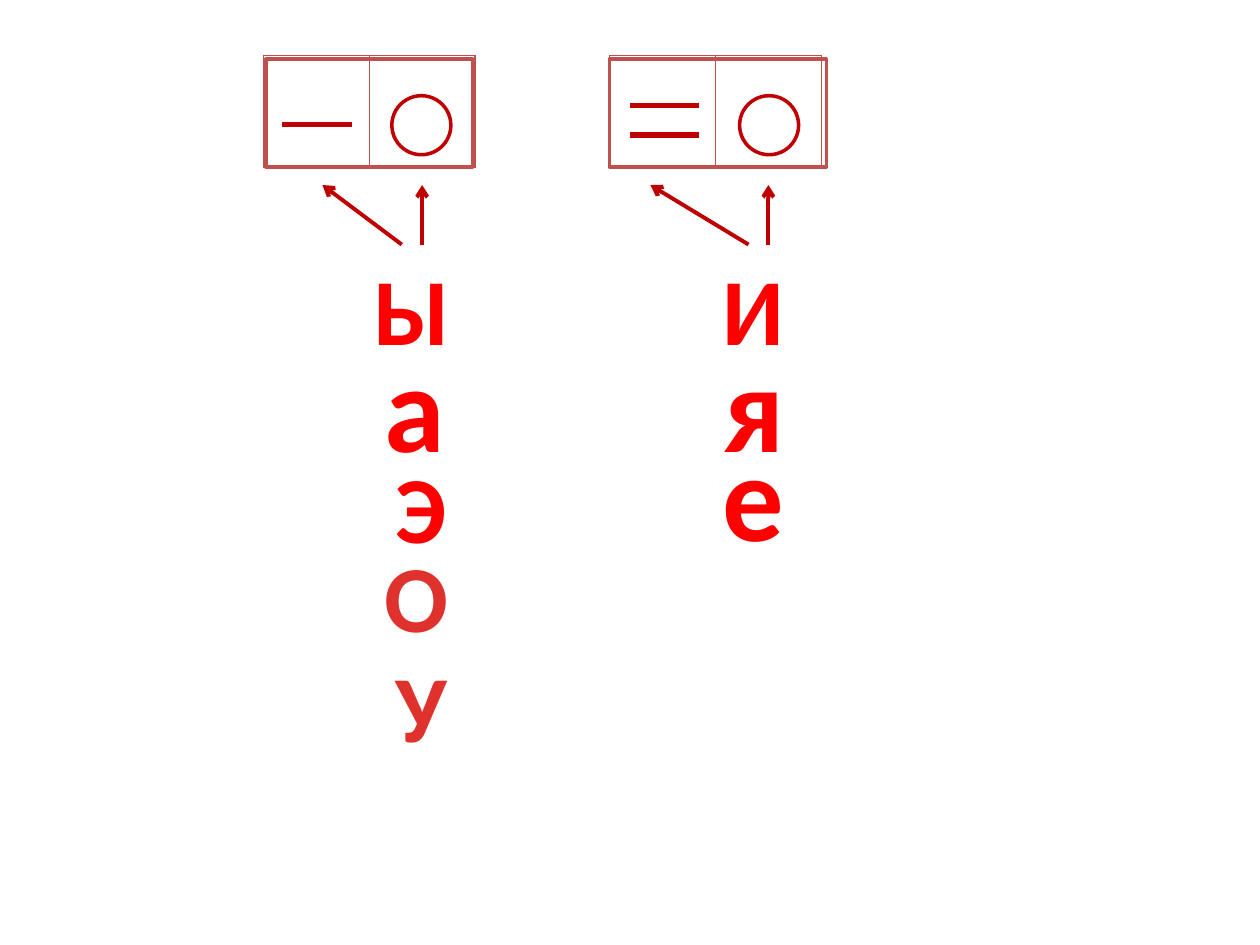
"""Build a slide of hard and soft consonant-vowel schemes with their vowels."""
from lxml import etree
from pptx import Presentation
from pptx.dml.color import RGBColor
from pptx.enum import shapes, text
from pptx.oxml import parse_xml
from pptx.oxml.ns import qn
from pptx.util import Cm, Pt

NS = 'xmlns:a="http://schemas.openxmlformats.org/drawingml/2006/main"'
FRAME, MARK, HARD, LOWER = "C0504D", "C00000", "FF0000", "E0322D"


def color(value):
    return RGBColor.from_string(value)


def add_line(page, start, end, width, arrow=False):
    line = page.shapes.add_connector(
        shapes.MSO_CONNECTOR.STRAIGHT, *[Cm(value) for value in start + end])
    line.line.color.rgb = color(MARK)
    line.line.width = Pt(width)
    if arrow:
        etree.SubElement(line.line._get_or_add_ln(), qn("a:tailEnd"), type="arrow")
    etree.SubElement(line._element.spPr, qn("a:effectLst"))


deck = Presentation()
deck.slide_width, deck.slide_height = Cm(25.4), Cm(19.05)
page = deck.slides.add_slide(deck.slide_layouts[6])

kinds = shapes.MSO_SHAPE
outlines = [
    (kinds.RECTANGLE, 12.29, 1.19, 4.37, 2.18, FRAME),
    (kinds.RECTANGLE, 5.36, 1.19, 4.17, 2.18, FRAME),
    (kinds.OVAL, 14.91, 1.93, 1.19, 1.19, MARK),
    (kinds.OVAL, 7.9, 1.93, 1.19, 1.19, MARK),
]
frames, circles = outlines[:2], outlines[2:]

for group in (frames, circles):
    for kind, left, top, width, height, line_color in group:
        shape = page.shapes.add_shape(kind, Cm(left), Cm(top), Cm(width), Cm(height))
        shape.shadow.inherit = False
        shape.fill.solid()
        shape.fill.fore_color.rgb = color("FFFFFF")
        shape.line.color.rgb = color(line_color)
        shape.line.width = Pt(2)
    if group is frames:
        for left in (5.31, 12.29):
            table = page.shapes.add_table(
                1, 2, Cm(left), Cm(1.12), Cm(4.27), Cm(2.24)).table
            for cell in table.iter_cells():
                borders = cell._tc.get_or_add_tcPr()
                for side, width in (("L", 1), ("R", 1), ("T", 1), ("B", 2)):
                    borders.append(parse_xml(
                        f'<a:ln{side} {NS} w="{Pt(width)}"><a:solidFill>'
                        f'<a:srgbClr val="{FRAME}"/></a:solidFill></a:ln{side}>'))
                cell.fill.background()

for left, top in ((5.69, 2.51), (12.7, 2.13), (12.7, 2.72)):
    add_line(page, (left, top), (left + 1.4, top), 3)

for start, end in ((15.09, 13.11), (15.49, 15.49), (8.1, 6.5), (8.51, 8.51)):
    add_line(page, (start, 4.93), (end, 3.73), 2.25, arrow=True)

letters = [
    ("Ы", 7.29, 4.93, 2.06, 54, HARD),
    ("а", 7.49, 6.53, 1.75, 70, HARD),
    ("Э", 7.7, 8.92, 1.57, 54, HARD),
    ("О", 7.49, 10.72, 1.83, 54, LOWER),
    ("У", 7.7, 12.93, 1.57, 54, LOWER),
    ("И", 14.3, 4.93, 1.78, 54, HARD),
    ("я", 14.3, 6.53, 1.78, 70, HARD),
    ("е", 14.3, 8.33, 1.78, 70, HARD),
]
for letter, left, top, width, size, letter_color in letters:
    height = 2.57 if size == 54 else 3.25
    box = page.shapes.add_textbox(Cm(left), Cm(top), Cm(width), Cm(height))
    box.text_frame.word_wrap = False
    box.text_frame.auto_size = text.MSO_AUTO_SIZE.SHAPE_TO_FIT_TEXT
    para = box.text_frame.paragraphs[0]
    para.text = letter
    para.alignment = text.PP_ALIGN.CENTER
    para.font.name = "Calibri"
    para.font.size = Pt(size)
    para.font.bold = True
    para.font.color.rgb = color(letter_color)

deck.save("out.pptx")
